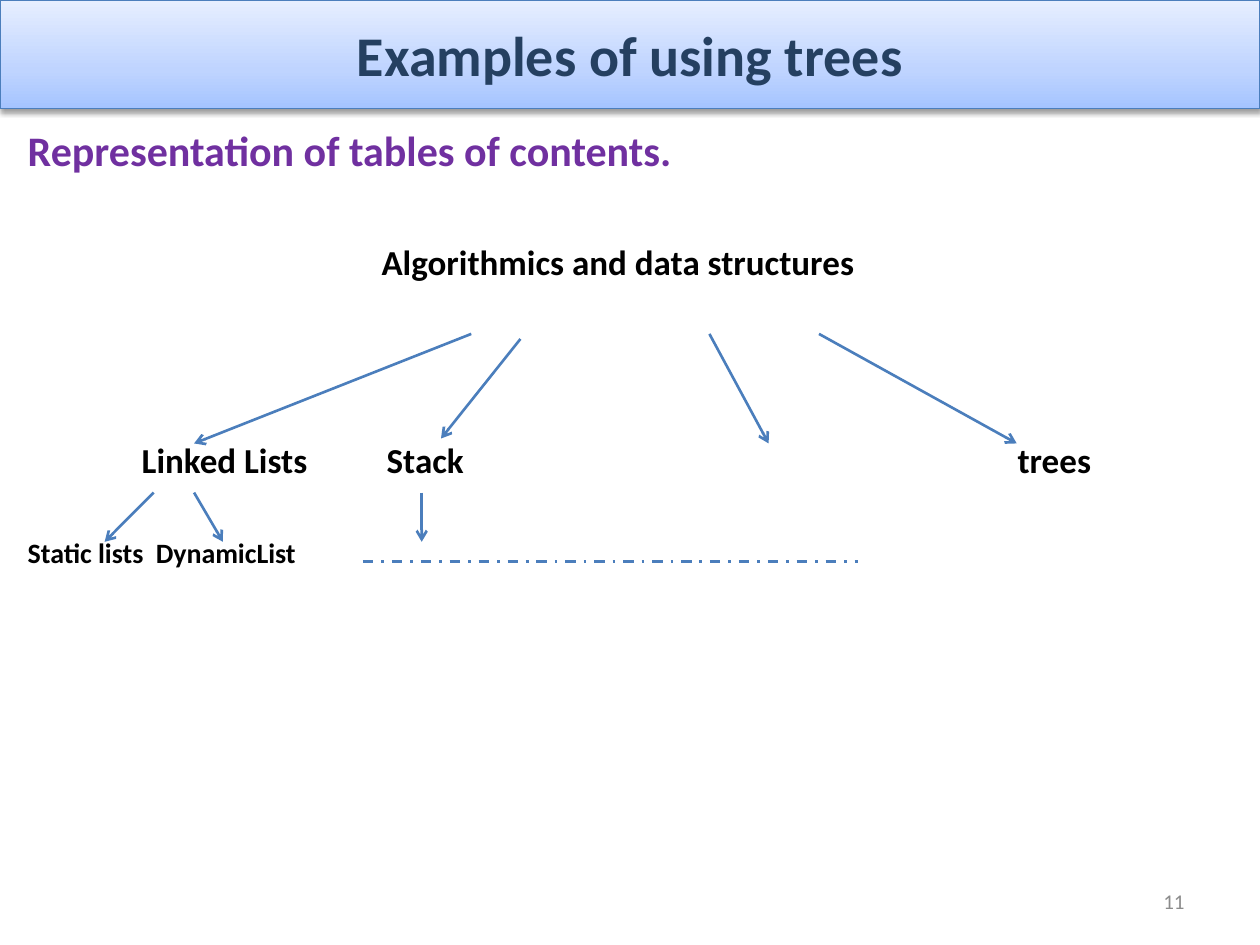
import copy

import pptx
import pptx.dml.color
import pptx.enum.dml
import pptx.enum.shapes
import pptx.enum.text
import pptx.oxml
import pptx.oxml.ns
import pptx.util

Pt = pptx.util.Pt
RGBColor = pptx.dml.color.RGBColor
ALIGN = pptx.enum.text.PP_ALIGN
ANCHOR = pptx.enum.text.MSO_ANCHOR
qn = pptx.oxml.ns.qn
NAMESPACE = pptx.oxml.ns.nsdecls("a")

FONT = "Calibri"
NAVY = RGBColor(0x25, 0x40, 0x61)
PURPLE = RGBColor(0x70, 0x30, 0xA0)
BLACK = RGBColor(0, 0, 0)
GRAY = RGBColor(0x8C, 0x8C, 0x8C)
BLUE = RGBColor(0x4B, 0x7E, 0xBC)
BANNER_STOPS = [
    (0, RGBColor(0xA4, 0xC4, 0xFF)),
    (0.35, RGBColor(0xBF, 0xD4, 0xFF)),
    (1, RGBColor(0xE6, 0xEE, 0xFF)),
]

# Body content: text, size, colour, alignment, space before
TITLE = "Examples of using trees"
SLIDE_NUMBER = "11"
BODY_LINES = [
    ("Representation of tables of contents.", 24, PURPLE, ALIGN.LEFT, 0),
    ("Algorithmics and data structures", 20, BLACK, ALIGN.CENTER, 37.3),
]

# Tree levels: top, size, then (text, left, width) of each label
TREE_LEVELS = [
    (250.5, 20, [("Linked Lists", 81, 100), ("Stack", 221, 50),
                 ("trees", 581.5, 50)]),
    (306.1, 16, [("Static lists", 15.84, 70), ("DynamicList", 89, 85)]),
]

# Arrows: start x, start y, end x, end y
CHAPTER_TOP, CHAPTER_BOTTOM = 190.8, 253.4
SECTION_TOP, SECTION_BOTTOM = 281.5, 309.6
ARROWS = [
    (269.3, CHAPTER_TOP, 110.9, CHAPTER_BOTTOM),
    (297.4, 193.7, 252, 250.6),
    (405.4, CHAPTER_TOP, 439.2, CHAPTER_BOTTOM),
    (468, CHAPTER_TOP, 581, CHAPTER_BOTTOM),
    (87.8, SECTION_TOP, 59.8, SECTION_BOTTOM),
    (110.9, SECTION_TOP, 127.4, SECTION_BOTTOM),
    (241, SECTION_TOP, 241, SECTION_BOTTOM),
]
CONTINUATION = (207.4, 320.9, 490.3, 320.9)


def place(shape, left, top, width, height):
    shape.left, shape.top = Pt(left), Pt(top)
    shape.width, shape.height = Pt(width), Pt(height)


def set_frame(shape, anchor):
    frame = shape.text_frame
    frame.word_wrap = True
    frame.auto_size = pptx.enum.text.MSO_AUTO_SIZE.NONE
    frame.vertical_anchor = anchor
    return frame


def add_run(paragraph, text, size, color, alignment, bold=True):
    paragraph.alignment = alignment
    run = paragraph.add_run()
    run.text = text
    run.font.name = FONT
    run.font.size = Pt(size)
    run.font.bold = bold
    run.font.color.rgb = color


def remove_bullet(paragraph):
    properties = paragraph._p.get_or_add_pPr()
    properties.set("marL", "0")
    properties.set("indent", "0")
    properties.append(pptx.oxml.parse_xml(f"<a:buNone {NAMESPACE}/>"))


def add_label(slide, text, left, top, width, size):
    label = slide.shapes.add_textbox(Pt(left), Pt(top), Pt(width), Pt(size * 1.25))
    frame = set_frame(label, ANCHOR.TOP)
    frame.margin_left = frame.margin_right = 0
    frame.margin_top = frame.margin_bottom = 0
    add_run(frame.paragraphs[0], text, size, BLACK, ALIGN.LEFT)


def add_line(slide, ends):
    line = slide.shapes.add_connector(
        pptx.enum.shapes.MSO_CONNECTOR.STRAIGHT, *[Pt(value) for value in ends])
    line.line.color.rgb = BLUE
    line.line.width = Pt(1.5)
    line._element.spPr.append(pptx.oxml.parse_xml(f"<a:effectLst {NAMESPACE}/>"))
    return line


def style_banner(banner):
    banner.fill.gradient()
    banner.fill.gradient_angle = 90
    stop_list = banner._element.spPr.find(".//" + qn("a:gsLst"))
    stop_list.append(copy.deepcopy(stop_list[0]))
    for stop, (position, color) in zip(banner.fill.gradient_stops, BANNER_STOPS):
        stop.position = position
        stop.color.rgb = color
    banner.line.color.rgb = BLUE
    banner.line.width = Pt(0.75)
    banner._element.spPr.append(pptx.oxml.parse_xml(
        f'<a:effectLst {NAMESPACE}><a:outerShdw blurRad="{Pt(3.1)}" '
        f'dist="{Pt(1.6)}" dir="5400000" rotWithShape="0">'
        '<a:srgbClr val="000000"><a:alpha val="38000"/></a:srgbClr>'
        "</a:outerShdw></a:effectLst>"))


def main():
    presentation = pptx.Presentation()
    presentation.slide_width, presentation.slide_height = Pt(720), Pt(540)
    slide = presentation.slides.add_slide(presentation.slide_layouts[1])

    # Title banner
    title = slide.shapes.title
    place(title, 0, 0, 720, 62)
    style_banner(title)
    frame = set_frame(title, ANCHOR.MIDDLE)
    add_run(frame.paragraphs[0], TITLE, 32, NAVY, ALIGN.CENTER)

    # Heading and tree root
    body = slide.placeholders[1]
    place(body, 8.64, 67.7, 689, 438.5)
    frame = set_frame(body, ANCHOR.TOP)
    for index, (text, size, color, alignment, gap) in enumerate(BODY_LINES):
        paragraph = frame.add_paragraph() if index else frame.paragraphs[0]
        remove_bullet(paragraph)
        paragraph.space_before = Pt(gap)
        add_run(paragraph, text, size, color, alignment)

    # Tree labels
    for top, size, labels in TREE_LEVELS:
        for text, left, width in labels:
            add_label(slide, text, left, top, width, size)

    # Slide number
    number = slide.shapes.add_textbox(Pt(516), Pt(500.5), Pt(168), Pt(28.8))
    frame = set_frame(number, ANCHOR.MIDDLE)
    add_run(frame.paragraphs[0], SLIDE_NUMBER, 12, GRAY, ALIGN.RIGHT, bold=False)

    # Tree branches
    for ends in ARROWS:
        arrow = add_line(slide, ends)
        arrow.line._get_or_add_ln().append(
            pptx.oxml.parse_xml(f'<a:tailEnd {NAMESPACE} type="arrow"/>'))
    continuation = add_line(slide, CONTINUATION)
    continuation.line.dash_style = pptx.enum.dml.MSO_LINE.DASH_DOT

    presentation.save("out.pptx")


if __name__ == "__main__":
    main()
